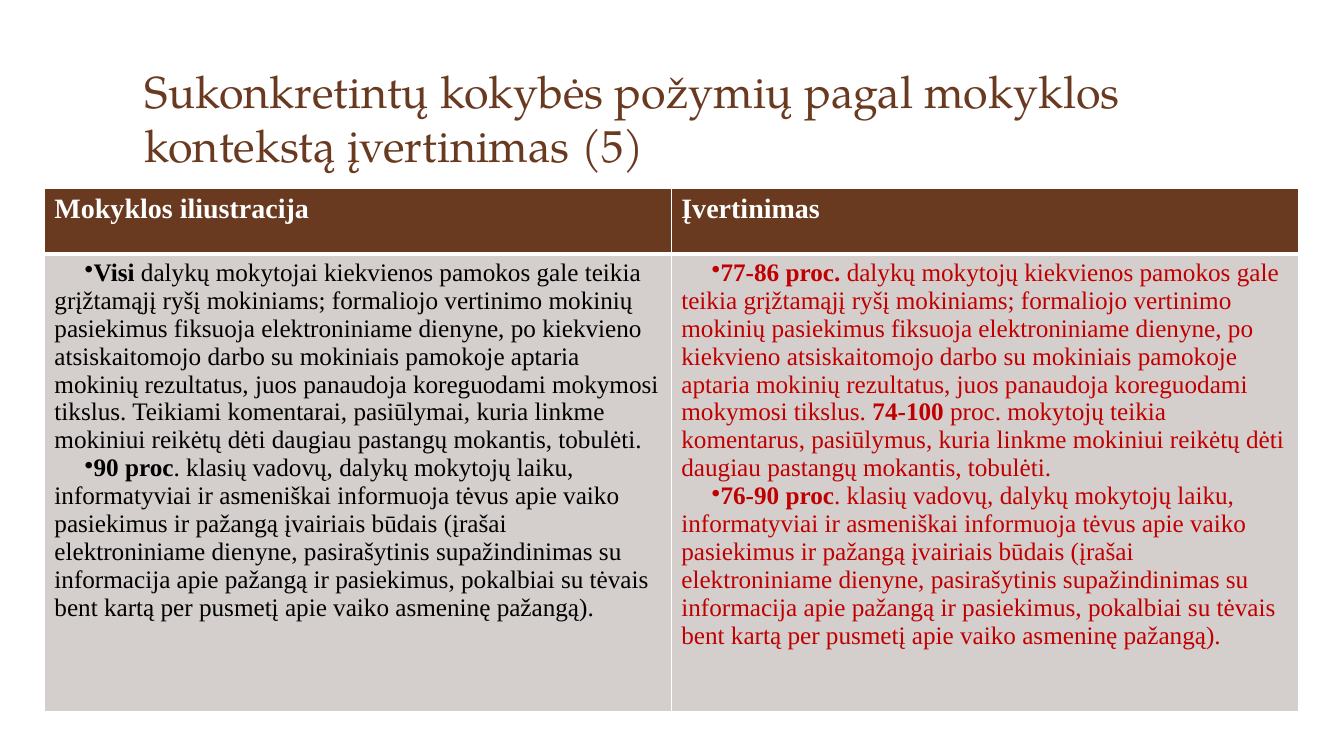
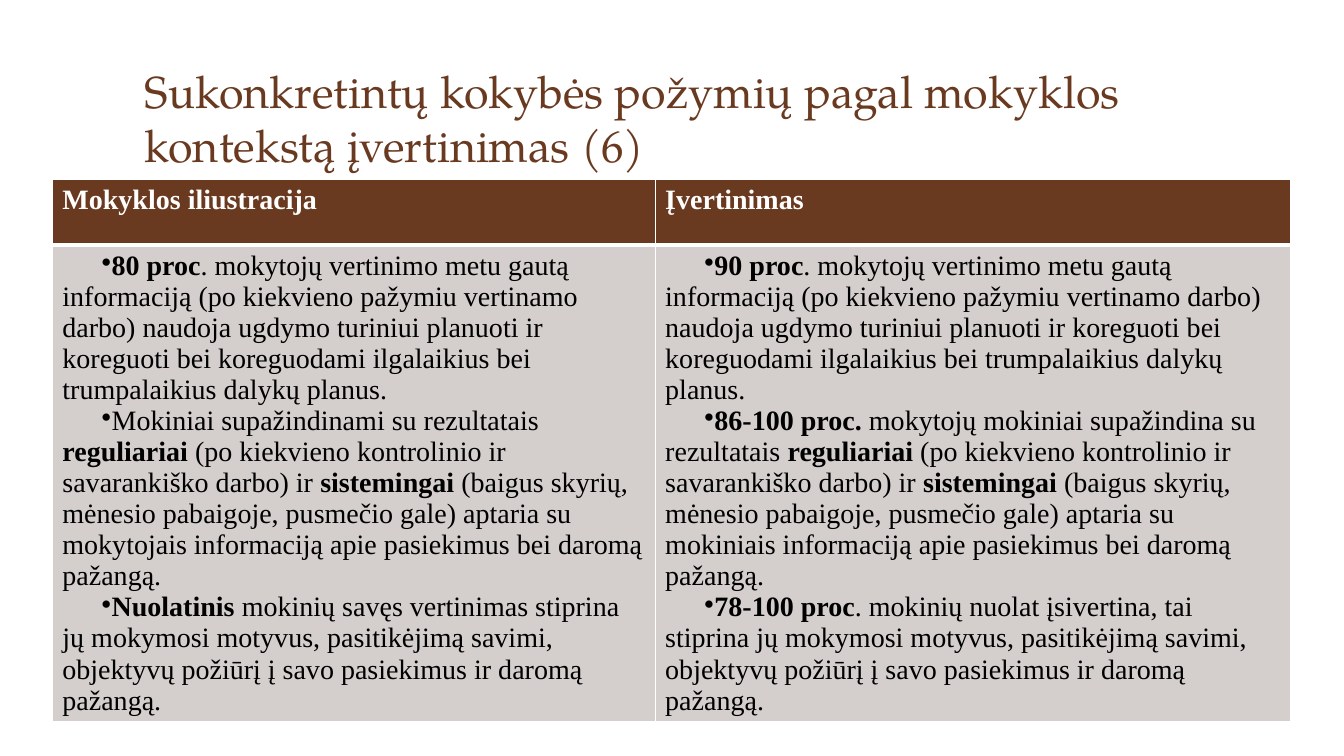
from lxml import etree
from pptx import Presentation
from pptx.dml.color import RGBColor
from pptx.enum import text
from pptx.oxml import ns
from pptx.util import Pt

PARENTS = (
    "klasių vadovų, dalykų mokytojų laiku, informatyviai ir asmeniškai informuoja tėvus "
    "apie vaiko pasiekimus ir pažangą įvairiais būdais (įrašai elektroniniame dienyne, "
    "pasirašytinis supažindinimas su informacija apie pažangą ir pasiekimus, pokalbiai su "
    "tėvais bent kartą per pusmetį apie vaiko asmeninę pažangą)."
)
FEEDBACK = (
    "kiekvienos pamokos gale teikia grįžtamąjį ryšį mokiniams; formaliojo vertinimo mokinių "
    "pasiekimus fiksuoja elektroniniame dienyne, po kiekvieno atsiskaitomojo darbo su "
    "mokiniais pamokoje aptaria mokinių rezultatus, juos panaudoja koreguodami mokymosi tikslus."
)
EFFORT = "kuria linkme mokiniui reikėtų dėti daugiau pastangų mokantis, tobulėti."
PLANNING = (
    "mokytojų vertinimo metu gautą informaciją (po kiekvieno pažymiu vertinamo darbo) naudoja "
    "ugdymo turiniui planuoti ir koreguoti bei koreguodami ilgalaikius bei trumpalaikius "
    "dalykų planus."
)
REGULARITY = (
    "*reguliariai* (po kiekvieno kontrolinio ir savarankiško darbo) ir *sistemingai* "
    "(baigus skyrių, mėnesio pabaigoje, pusmečio gale) aptaria su"
)
PROGRESS = "informaciją apie pasiekimus bei daromą pažangą."
MOTIVATION = (
    "stiprina jų mokymosi motyvus, pasitikėjimą savimi, objektyvų požiūrį į savo pasiekimus "
    "ir daromą pažangą."
)


def colour(value):
    return RGBColor.from_string(value)


class Deck:
    BROWN, GREY, WHITE, BLACK, RED = "6A3A20", "D4CECD", "FFFFFF", "000000", "C00000"
    TITLE_FONT, TABLE_FONT = "TeX Gyre Pagella", "Times New Roman"
    HEADINGS = ("Mokyklos iliustracija", "Įvertinimas")
    ROWS = (46.8, 326.9)

    def __init__(self):
        self.prs = Presentation()
        self.prs.slide_width, self.prs.slide_height = Pt(960), Pt(540)
        self.slide = None

    def font(self, paragraph, name, size, shade):
        paragraph.font.name = name
        paragraph.font.size = Pt(size)
        paragraph.font.color.rgb = colour(shade)

    def add_slide(self, number):
        self.slide = self.prs.slides.add_slide(self.prs.slide_layouts[5])
        title = self.slide.shapes.title
        title.left, title.top, title.width, title.height = Pt(96), Pt(33.8), Pt(767.5), Pt(92.2)
        frame = title.text_frame
        frame.text = f"Sukonkretintų kokybės požymių pagal mokyklos kontekstą įvertinimas ({number})"
        frame.auto_size = text.MSO_AUTO_SIZE.NONE
        frame.vertical_anchor = text.MSO_ANCHOR.BOTTOM
        heading = frame.paragraphs[0]
        heading.alignment = text.PP_ALIGN.LEFT
        heading.line_spacing = Pt(38.5)
        self.font(heading, self.TITLE_FONT, 32, self.BROWN)

    def style_cell(self, cell, shade, top, bottom):
        properties = cell._tc.get_or_add_tcPr()
        for side, width in (("L", 1), ("R", 1), ("T", top), ("B", bottom)):
            border = etree.SubElement(properties, ns.qn(f"a:ln{side}"), w=str(Pt(width)))
            fill = etree.SubElement(border, ns.qn("a:solidFill"))
            etree.SubElement(fill, ns.qn("a:srgbClr"), val=self.WHITE)
        cell.fill.solid()
        cell.fill.fore_color.rgb = colour(shade)

    def bullet(self, paragraph, content, indent, size, shade):
        properties = paragraph._p.get_or_add_pPr()
        properties.set("marL", "0")
        properties.set("indent", str(Pt(indent)))
        etree.SubElement(properties, ns.qn("a:buChar"), char="•")
        self.font(paragraph, self.TABLE_FONT, size, shade)
        for position, part in enumerate(content.split("*")):
            if part:
                run = paragraph.add_run()
                run.text = part
                run.font.bold = position % 2 == 1

    def comparison(self, left, top, widths, columns, indent, size, shades):
        table = self.slide.shapes.add_table(
            2, 2, Pt(left), Pt(top), Pt(sum(widths)), Pt(sum(self.ROWS))
        ).table
        table.first_row = table.horz_banding = False
        for row, height in zip(table.rows, self.ROWS):
            row.height = Pt(height)
        for index, points in enumerate(columns):
            table.columns[index].width = Pt(widths[index])
            header, body = table.cell(0, index), table.cell(1, index)
            self.style_cell(header, self.BROWN, 1, 3)
            self.style_cell(body, self.GREY, 3, 1)
            header.text = self.HEADINGS[index]
            heading = header.text_frame.paragraphs[0]
            self.font(heading, self.TABLE_FONT, 20, self.WHITE)
            heading.font.bold = True
            frame = body.text_frame
            for order, point in enumerate(points):
                paragraph = frame.add_paragraph() if order else frame.paragraphs[0]
                self.bullet(paragraph, point, indent, size, shades[index])


def main():
    deck = Deck()

    deck.add_slide(5)
    illustration = [
        f"*Visi* dalykų mokytojai {FEEDBACK} Teikiami komentarai, pasiūlymai, {EFFORT}",
        f"*90 proc*. {PARENTS}",
    ]
    evaluation = [
        f"*77-86 proc. *dalykų mokytojų {FEEDBACK} *74-100 *proc. mokytojų teikia "
        f"komentarus, pasiūlymus, {EFFORT}",
        f"*76-90 proc*. {PARENTS}",
    ]
    deck.comparison(31.7, 134.6, (447.8, 447.8), (illustration, evaluation),
                    21.6, 18, (deck.BLACK, deck.RED))

    deck.add_slide(6)
    illustration = [
        f"*80 proc*. {PLANNING}",
        f"Mokiniai supažindinami su rezultatais {REGULARITY} mokytojais {PROGRESS}",
        f"*Nuolatinis* mokinių savęs vertinimas {MOTIVATION}",
    ]
    evaluation = [
        f"*90 proc*. {PLANNING}",
        f"*86-100 proc. *mokytojų mokiniai supažindina su rezultatais {REGULARITY} "
        f"mokiniais {PROGRESS}",
        f"*78-100 proc*. mokinių nuolat įsivertina, tai {MOTIVATION}",
    ]
    deck.comparison(37.4, 128.2, (430.6, 453.6), (illustration, evaluation),
                    28, 20, (deck.BLACK, deck.BLACK))

    deck.prs.save("out.pptx")


if __name__ == "__main__":
    main()
